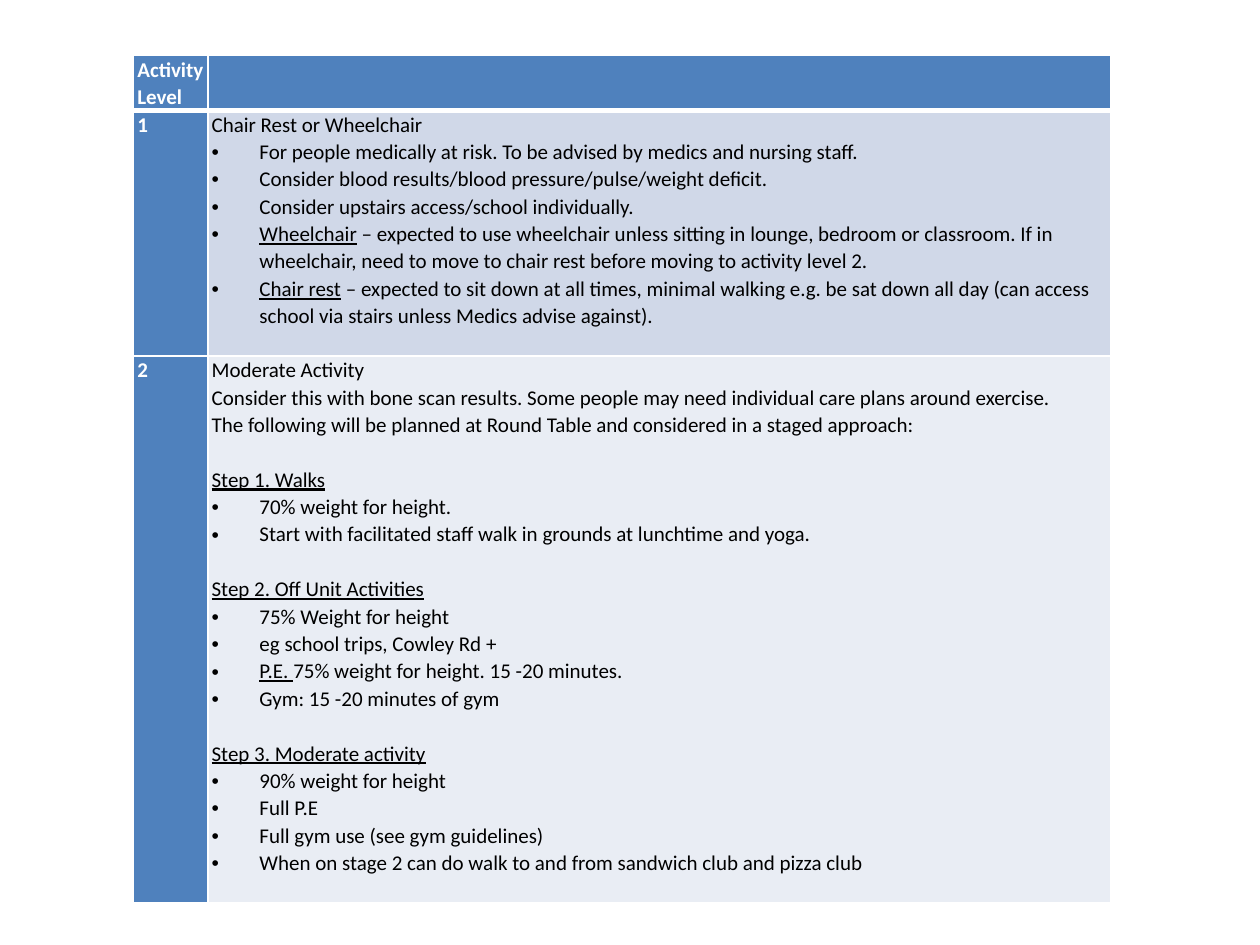
from lxml.etree import SubElement as Sub
from pptx import Presentation as Deck
from pptx.dml.color import RGBColor
from pptx.oxml.ns import qn
from pptx.util import Inches, Pt


def tint(code):
    return RGBColor.from_string(code)


def write(cell, text, size=12, color="000000", bold=False, font="Calibri", lead=1.07, gap=15.65):
    frame = cell.text_frame
    for at, line in enumerate(text.split("\n")):
        para = frame.paragraphs[0] if at == 0 else frame.add_paragraph()
        para.line_spacing = lead
        para.font.size = Pt(size)
        if line.startswith("^"):
            para.space_before = Pt(gap)
            line = line[1:]
        if line.startswith("• "):
            props = para._p.get_or_add_pPr()
            props.set("marL", str(Inches(0.38)))
            props.set("indent", str(-Inches(0.38)))
            Sub(props, qn("a:buFont"), typeface="Arial")
            Sub(props, qn("a:buChar"), char="•")
            line = line[2:]
        for turn, part in enumerate(line.split("_")):
            if part:
                run = para.add_run()
                run.text = part
                face = run.font
                face.name, face.size, face.bold = font, Pt(size), bold
                face.underline = turn % 2 == 1
                face.color.rgb = tint(color)


CHAIR = """Chair Rest or Wheelchair
• For people medically at risk. To be advised by medics and nursing staff.
• Consider blood results/blood pressure/pulse/weight deficit.
• Consider upstairs access/school individually.
• _Wheelchair_ – expected to use wheelchair unless sitting in lounge, bedroom or classroom. If in wheelchair, need to move to chair rest before moving to activity level 2.
• _Chair rest_ – expected to sit down at all times, minimal walking e.g. be sat down all day (can access school via stairs unless Medics advise against)."""

STEPS = """Moderate Activity
Consider this with bone scan results. Some people may need individual care plans around exercise.
The following will be planned at Round Table and considered in a staged approach:
^_Step 1. Walks_
• 70% weight for height.
• Start with facilitated staff walk in grounds at lunchtime and yoga.
^_Step 2. Off Unit Activities_
• 75% Weight for height
• eg school trips, Cowley Rd +
• _P.E. _75% weight for height. 15 -20 minutes.
• Gym: 15 -20 minutes of gym
^_Step 3. Moderate activity_
• 90% weight for height
• Full P.E
• Full gym use (see gym guidelines)
• When on stage 2 can do walk to and from sandwich club and pizza club"""

BLUE, WHITE = "4F81BD", "FFFFFF"
ROWS = [
    ("Activity Level", "", BLUE, 0.43),
    ("1", CHAIR, "D0D8E8", 1.95),
    ("2", STEPS, "E9EDF4", 4.34),
]
COLS = [0.59, 7.17]

deck = Deck()
deck.slide_width, deck.slide_height = Inches(10), Inches(7.5)
slide = deck.slides.add_slide(deck.slide_layouts[6])
high = sum(row[3] for row in ROWS)
grid = slide.shapes.add_table(
    len(ROWS), len(COLS), Inches(1.06), Inches(0.44), Inches(sum(COLS)), Inches(high)
).table
grid.first_col = True
grid.horz_banding = False
for col, wide in zip(grid.columns, COLS):
    col.width = Inches(wide)

for r, (level, body, shade, tall) in enumerate(ROWS):
    grid.rows[r].height = Inches(tall)
    for c, text in enumerate((level, body)):
        cell = grid.cell(r, c)
        cell.margin_left = cell.margin_right = Inches(0.03)
        cell.margin_top = cell.margin_bottom = 0
        props = cell._tc.get_or_add_tcPr()
        for side in "LRTB":
            thick = (r, side) in ((0, "B"), (1, "T"))
            edge = Sub(props, qn("a:ln" + side), w=str(Pt(3 if thick else 1)))
            Sub(Sub(edge, qn("a:solidFill")), qn("a:srgbClr"), val=WHITE)
        cell.fill.solid()
        cell.fill.fore_color.rgb = tint(shade if c else BLUE)
        write(cell, text, color="000000" if c else WHITE, bold=c == 0)

deck.save("out.pptx")
